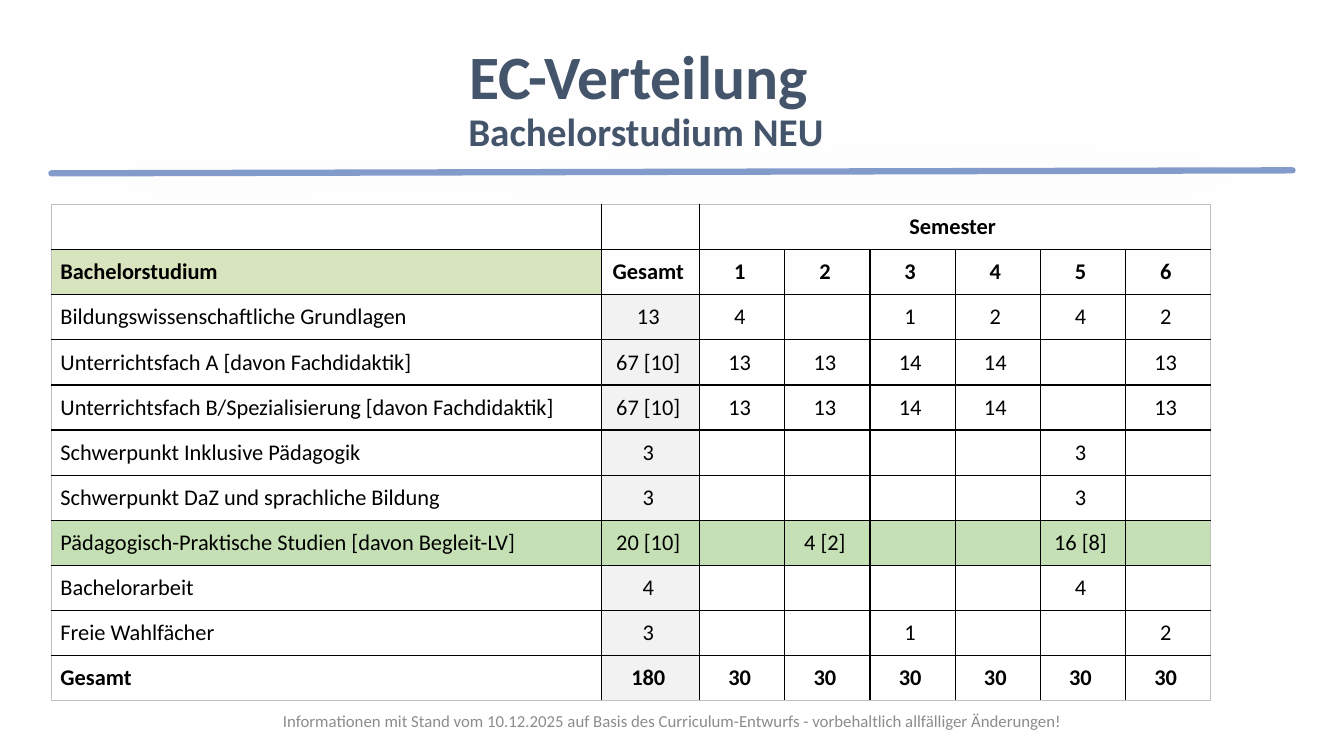
from lxml.etree import SubElement
from pptx import Presentation
from pptx.dml.color import RGBColor
from pptx.enum.shapes import MSO_CONNECTOR
from pptx.enum.text import MSO_ANCHOR, PP_ALIGN
from pptx.oxml.ns import qn
from pptx.util import Inches, Pt

SLATE = RGBColor(0x44, 0x54, 0x6A)
BLUE = RGBColor(0x43, 0x69, 0xB0)
BLACK = RGBColor(0x00, 0x00, 0x00)
GREY = RGBColor(0x8C, 0x8C, 0x8C)
FRAME = RGBColor(0xBF, 0xBF, 0xBF)
SHADOW = RGBColor(0xA6, 0xA6, 0xA6)
PALE = RGBColor(0xF2, 0xF2, 0xF2)
OLIVE = RGBColor(0xD7, 0xE4, 0xBD)
GREEN = RGBColor(0xC5, 0xE0, 0xB4)

NBSP = chr(160)
HEADER_ROW, PRACTICE_ROW = 1, 7
CREDITS = [
    ["", "", "Semester", "", "", "", "", ""],
    ["Bachelorstudium", "Gesamt", "1", "2", "3", "4", "5", "6"],
    ["Bildungswissenschaftliche Grundlagen", "13", "4", "", "1", "2", "4", "2"],
    ["Unterrichtsfach A [davon Fachdidaktik]", "67 [10]", "13", "13", "14", "14", "", "13"],
    ["Unterrichtsfach B/Spezialisierung [davon Fachdidaktik]", "67 [10]", "13", "13", "14", "14", "", "13"],
    ["Schwerpunkt Inklusive Pädagogik", "3", "", "", "", "", "3", ""],
    ["Schwerpunkt DaZ und sprachliche Bildung", "3", "", "", "", "", "3", ""],
    ["Pädagogisch-Praktische Studien [davon Begleit-LV]", "20 [10]", "", "4 [2]", "", "", "16 [8]", ""],
    ["Bachelorarbeit", "4", "", "", "", "", "4", ""],
    ["Freie Wahlfächer", "3", "", "", "1", "", "", "2"],
    ["Gesamt", "180", "30", "30", "30", "30", "30", "30"],
]
COLUMN_WIDTHS = [5.46, 0.97] + [0.845] * 6


def cell_fill(row, column):
    """Return the fill colour of a table cell, or None."""
    if row == PRACTICE_ROW:
        return GREEN
    if (row, column) == (HEADER_ROW, 0):
        return OLIVE
    return PALE if column == 1 and row > HEADER_ROW else None


class SlideBuilder:
    """Draw styled elements on one slide."""

    def __init__(self, slide, font="Calibri"):
        self.slide = slide
        self.font = font

    def style(self, run, size, color, bold=False):
        """Format one run."""
        run.font.name = self.font
        run.font.size = Pt(size)
        run.font.bold = bold
        run.font.color.rgb = color

    def text(self, left, top, width, height, content, sizes, color, bold=False, spacing=1.0):
        """Add centred text with one size per line."""
        frame = self.slide.shapes.add_textbox(
            Inches(left), Inches(top), Inches(width), Inches(height)).text_frame
        frame.word_wrap = True
        frame.vertical_anchor = MSO_ANCHOR.MIDDLE
        paragraph = frame.paragraphs[0]
        paragraph.text = content
        paragraph.alignment = PP_ALIGN.CENTER
        paragraph.line_spacing = spacing
        for run, size in zip(paragraph.runs, sizes):
            self.style(run, size, color, bold)

    def rule(self, x1, y1, x2, y2, color, width):
        """Add a translucent round-capped line with a soft shadow."""
        rule = self.slide.shapes.add_connector(
            MSO_CONNECTOR.STRAIGHT, Inches(x1), Inches(y1), Inches(x2), Inches(y2))
        rule.line.color.rgb = color
        rule.line.width = Pt(width)
        properties = rule._element.spPr
        outline = properties.find(qn("a:ln"))
        outline.set("cap", "rnd")
        SubElement(outline.find(".//" + qn("a:srgbClr")), qn("a:alpha"), val="66000")
        effects = SubElement(properties, qn("a:effectLst"))
        shadow = SubElement(effects, qn("a:outerShdw"), blurRad=str(Pt(100)),
                            dist=str(Pt(3)), dir="5400000", rotWithShape="0")
        tint = SubElement(shadow, qn("a:srgbClr"), val=str(SHADOW))
        SubElement(tint, qn("a:alpha"), val="38000")

    def borders(self, cell, outer):
        """Draw the four cell borders, with the frame colour on outer sides."""
        properties = cell._tc.get_or_add_tcPr()
        for position, side in enumerate("LRTB"):
            line = properties.makeelement(qn(f"a:ln{side}"), {"w": str(Pt(1))})
            color = FRAME if side in outer else BLACK
            SubElement(SubElement(line, qn("a:solidFill")), qn("a:srgbClr"), val=str(color))
            properties.insert(position, line)

    def cell(self, cell, content, color, centred, bold):
        """Fill one table cell and set its text."""
        if color is None:
            cell.fill.background()
        else:
            cell.fill.solid()
            cell.fill.fore_color.rgb = color
        cell.margin_left = cell.margin_right = Inches(0.09)
        cell.margin_top = cell.margin_bottom = Inches(0.04)
        cell.vertical_anchor = MSO_ANCHOR.MIDDLE
        if content:
            paragraph = cell.text_frame.paragraphs[0]
            paragraph.text = content + NBSP if centred else content
            paragraph.alignment = PP_ALIGN.CENTER if centred else PP_ALIGN.LEFT
            self.style(paragraph.runs[0], 16, BLACK, bold)

    def table(self, left, top, width, height, rows, column_widths):
        """Add the credit table with its merged semester heading."""
        table = self.slide.shapes.add_table(
            len(rows), len(column_widths),
            Inches(left), Inches(top), Inches(width), Inches(height)).table
        table.first_row = table.horz_banding = False
        for column, column_width in zip(table.columns, column_widths):
            column.width = Inches(column_width)
        last_row, last_column = len(rows) - 1, len(column_widths) - 1
        table.cell(0, 2).merge(table.cell(0, last_column))
        for r, entries in enumerate(rows):
            table.rows[r].height = Inches(height / len(rows))
            for c, entry in enumerate(entries):
                cell = table.cell(r, c)
                self.cell(cell, entry, cell_fill(r, c), c > 0, r <= HEADER_ROW or r == last_row)
                edges = {"L": c == 0, "R": c == last_column or (r == 0 and c >= 2),
                         "T": r == 0, "B": r == last_row}
                self.borders(cell, [side for side, is_outer in edges.items() if is_outer])


def main():
    """Build and save the slide."""
    presentation = Presentation()
    presentation.slide_width = Inches(13.33)
    presentation.slide_height = Inches(7.5)
    builder = SlideBuilder(presentation.slides.add_slide(presentation.slide_layouts[6]))
    builder.rule(0.51, 1.72, 12.82, 1.69, BLUE, 4.5)
    builder.text(3.01, 0.77, 6.79, 0.46, "EC-Verteilung \vBachelorstudium NEU",
                 [44, 28], SLATE, bold=True, spacing=0.9)
    builder.table(0.51, 2.03, 11.5, 4.92, CREDITS, COLUMN_WIDTHS)
    builder.text(1.97, 6.95, 9.4, 0.4,
                 "Informationen mit Stand vom 10.12.2025 auf Basis des Curriculum-Entwurfs"
                 " - vorbehaltlich allfälliger Änderungen!", [12], GREY)
    presentation.save("out.pptx")


if __name__ == "__main__":
    main()
